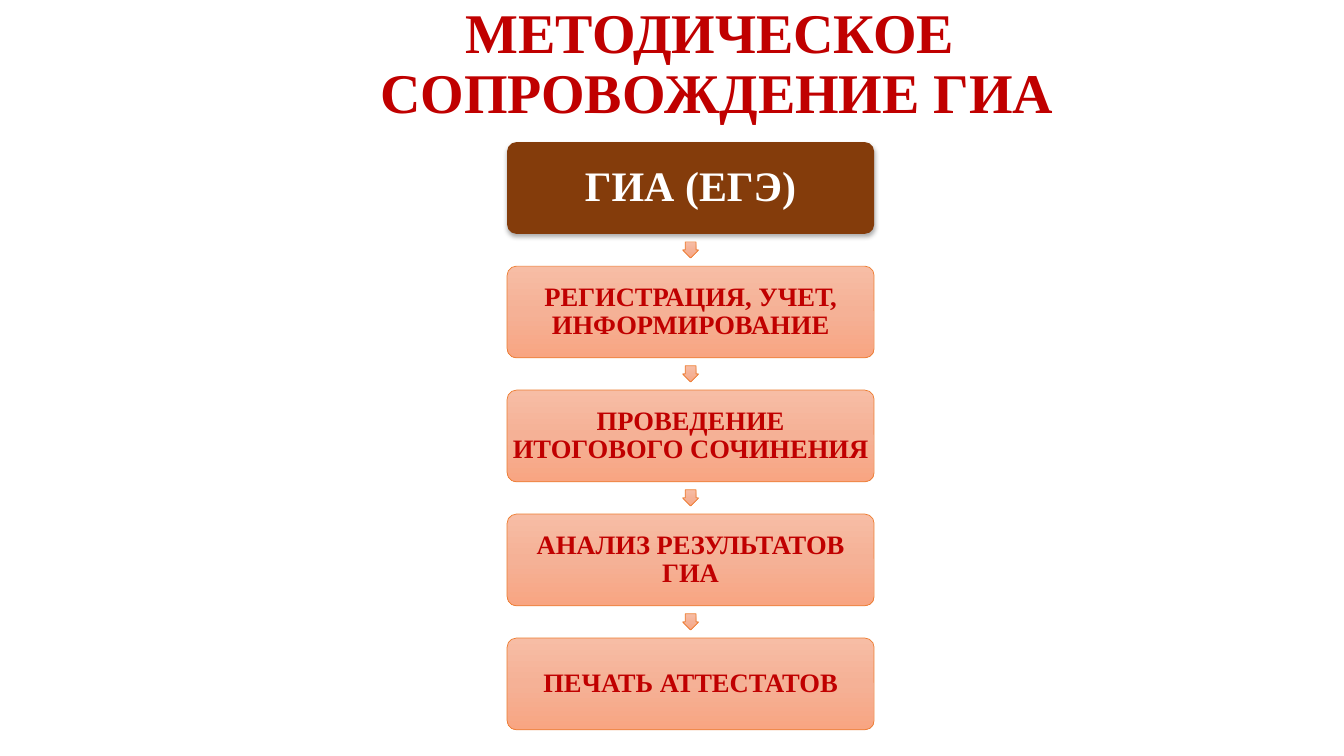
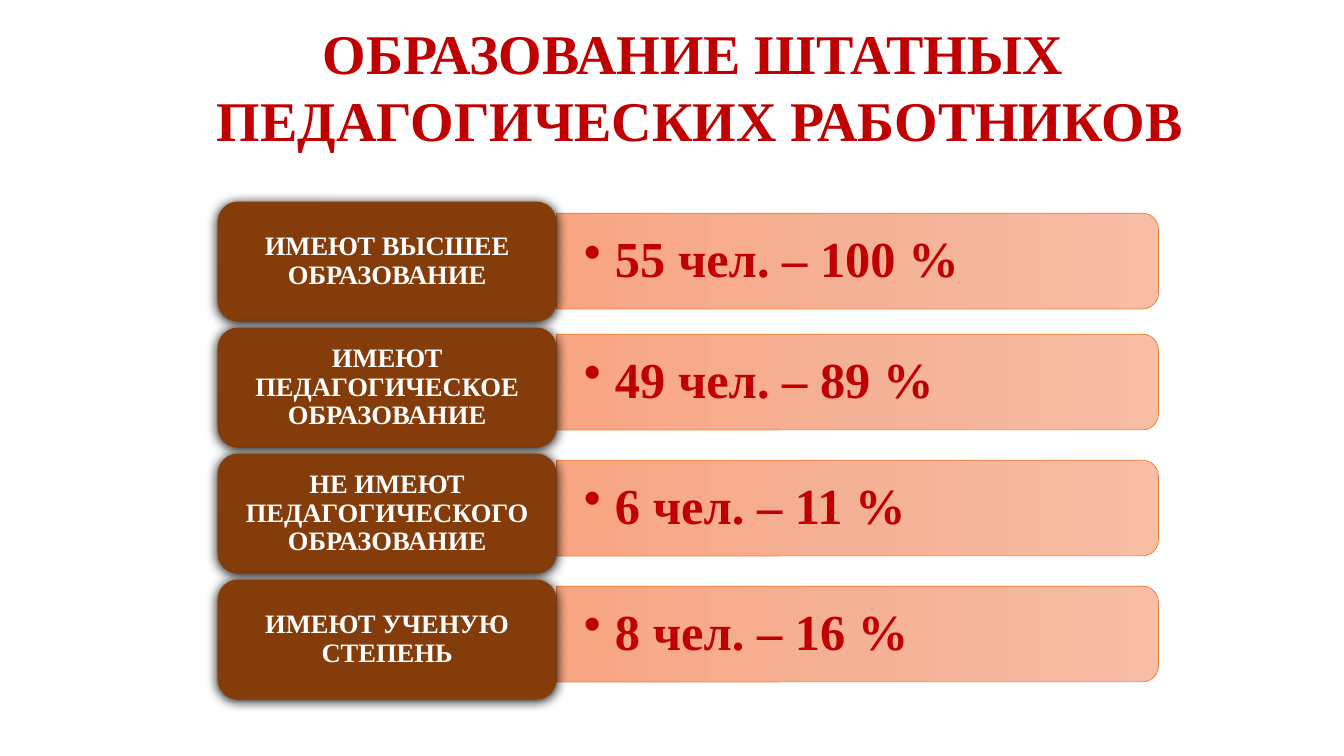
from copy import deepcopy

from lxml import etree
from pptx import Presentation
from pptx.dml.color import RGBColor
from pptx.enum.shapes import MSO_SHAPE
from pptx.enum.text import MSO_ANCHOR, MSO_AUTO_SIZE, PP_ALIGN
from pptx.oxml.ns import qn
from pptx.util import Inches, Pt

ROUNDED = MSO_SHAPE.ROUNDED_RECTANGLE
DOWN_ARROW = MSO_SHAPE.DOWN_ARROW
HALF_ROUNDED = MSO_SHAPE.ROUND_2_SAME_RECTANGLE
CENTER, LEFT = PP_ALIGN.CENTER, PP_ALIGN.LEFT
TOP, MIDDLE = MSO_ANCHOR.TOP, MSO_ANCHOR.MIDDLE
NO_AUTOFIT = MSO_AUTO_SIZE.NONE

FONT = "Times New Roman"
RED = RGBColor(0xC0, 0x00, 0x00)
WHITE = RGBColor(0xFF, 0xFF, 0xFF)
BROWN = RGBColor(0x84, 0x3C, 0x0B)
ORANGE = RGBColor(0xED, 0x7D, 0x31)
PEACH = [RGBColor(0xF7, 0xBD, 0xA5), RGBColor(0xF5, 0xB1, 0x96), RGBColor(0xF8, 0xA5, 0x82)]


def add_block(slide, kind, left, top, width, height, shadow=None):
    """Brown block if a shadow (opacity %, blur pt, distance pt) is given, else a peach one."""
    shape = slide.shapes.add_shape(kind, Inches(left), Inches(top), Inches(width), Inches(height))
    shape.shadow.inherit = False
    properties = shape.element.spPr
    if shadow:
        opacity, blur, distance = shadow
        shape.fill.solid()
        shape.fill.fore_color.rgb = BROWN
        shape.line.fill.background()
        outer = etree.SubElement(properties.find(qn("a:effectLst")), qn("a:outerShdw"),
                                 blurRad=str(Pt(blur)), dist=str(Pt(distance)),
                                 dir="5400000", algn="ctr", rotWithShape="0")
        color = etree.SubElement(outer, qn("a:srgbClr"), val="000000")
        etree.SubElement(color, qn("a:alpha"), val=str(opacity * 1000))
    else:
        shape.fill.gradient()
        shape.fill.gradient_angle = 270
        # Middle stop of the gradient
        stops = properties.find(qn("a:gradFill")).find(qn("a:gsLst"))
        stops.insert(1, deepcopy(stops[0]))
        stops[1].set("pos", "50000")
        for stop, color in zip(shape.fill.gradient_stops, PEACH):
            stop.color.rgb = color
        shape.line.color.rgb = ORANGE
        shape.line.width = Pt(0.5)
    return shape


def write(shape, text, size, color, align=CENTER, anchor=MIDDLE, spacing=0.9,
          margins=(0.1, 0.05), bullet_indent=None):
    frame = shape.text_frame
    frame.text = text
    frame.word_wrap = True
    frame.auto_size = NO_AUTOFIT
    frame.vertical_anchor = anchor
    frame.margin_left = frame.margin_right = Inches(margins[0])
    frame.margin_top = frame.margin_bottom = Inches(margins[1])
    for paragraph in frame.paragraphs:
        paragraph.alignment = align
        paragraph.line_spacing = spacing
        if bullet_indent:
            properties = paragraph._p.get_or_add_pPr()
            properties.set("marL", str(Inches(bullet_indent)))
            properties.set("indent", str(-Inches(bullet_indent)))
            etree.SubElement(properties, qn("a:buChar"), char="•")
        paragraph.font.name = FONT
        paragraph.font.size = Pt(size)
        paragraph.font.bold = True
        paragraph.font.color.rgb = color


presentation = Presentation()
presentation.slide_width = Inches(13.33)
presentation.slide_height = Inches(7.5)

# Slides with their titles: text, left, top, height, line spacing
titles = [
    ("МЕТОДИЧЕСКОЕ \nСОПРОВОЖДЕНИЕ ГИА", 1.11, 0, 1.25, 0.9),
    ("ОБРАЗОВАНИЕ ШТАТНЫХ \vПЕДАГОГИЧЕСКИХ РАБОТНИКОВ", 0.94, 0.13, 1.45, 1.0),
]
for text, left, top, height, spacing in titles:
    slide = presentation.slides.add_slide(presentation.slide_layouts[5])
    title = slide.shapes.title
    title.left, title.top = Inches(left), Inches(top)
    title.width, title.height = Inches(12), Inches(height)
    write(title, text, 40, RED, anchor=TOP, spacing=spacing)
support_slide, education_slide = presentation.slides

# Slide 1: chain of steps with arrows between them
STEP_LEFT, STEP_TOP, STEP_WIDTH, STEP_HEIGHT, STEP_PITCH = 5.03, 1.41, 3.64, 0.91, 1.23
ARROW_SIZE = 0.16
steps = [
    "ГИА (ЕГЭ)",
    "РЕГИСТРАЦИЯ, УЧЕТ, ИНФОРМИРОВАНИЕ",
    "ПРОВЕДЕНИЕ ИТОГОВОГО СОЧИНЕНИЯ",
    "АНАЛИЗ РЕЗУЛЬТАТОВ ГИА",
    "ПЕЧАТЬ АТТЕСТАТОВ",
]
for index, text in enumerate(steps):
    top = STEP_TOP + index * STEP_PITCH
    is_head = index == 0
    if not is_head:
        gap = STEP_PITCH - STEP_HEIGHT
        arrow = add_block(support_slide, DOWN_ARROW,
                          STEP_LEFT + (STEP_WIDTH - ARROW_SIZE) / 2,
                          top - (gap + ARROW_SIZE) / 2, ARROW_SIZE, ARROW_SIZE)
        arrow.adjustments[0] = 0.67
    step = add_block(support_slide, ROUNDED, STEP_LEFT, top, STEP_WIDTH, STEP_HEIGHT,
                     shadow=(32, 3.5, 2.2) if is_head else None)
    step.adjustments[0] = 0.1
    write(step, text, 30 if is_head else 19, WHITE if is_head else RED, margins=(0.02, 0.03))

# Slide 2: label cards with value bars
CARD_LEFT, CARD_TOP, CARD_WIDTH, CARD_HEIGHT, CARD_PITCH = 2.16, 2, 3.36, 1.19, 1.25
BAR_LEFT, BAR_LENGTH, BAR_THICKNESS = CARD_LEFT + CARD_WIDTH, 5.97, 0.95
# Label, value, middle of the bar
education_rows = [
    ("ИМЕЮТ ВЫСШЕЕ ОБРАЗОВАНИЕ", "55 чел. – 100 %", 2.59),
    ("ИМЕЮТ ПЕДАГОГИЧЕСКОЕ ОБРАЗОВАНИЕ", "49 чел. – 89 %", 3.79),
    ("НЕ ИМЕЮТ ПЕДАГОГИЧЕСКОГО ОБРАЗОВАНИЕ", "6 чел. – 11 %", 5.04),
    ("ИМЕЮТ УЧЕНУЮ СТЕПЕНЬ", "8 чел. – 16 %", 6.29),
]
for index, (label, value, middle) in enumerate(education_rows):
    # Bar turned so that its rounded end points right
    bar = add_block(education_slide, HALF_ROUNDED,
                    BAR_LEFT + (BAR_LENGTH - BAR_THICKNESS) / 2, middle - BAR_LENGTH / 2,
                    BAR_THICKNESS, BAR_LENGTH)
    bar.rotation = 90

    # Bulleted value
    value_box = education_slide.shapes.add_textbox(
        Inches(BAR_LEFT), Inches(middle - 0.43), Inches(5.93), Inches(0.86))
    write(value_box, value, 36, RED, align=LEFT, margins=(0.27, 0.14), bullet_indent=0.31)

    card = add_block(education_slide, ROUNDED, CARD_LEFT, CARD_TOP + index * CARD_PITCH,
                     CARD_WIDTH, CARD_HEIGHT, shadow=(100, 8.5, 1))
    write(card, label, 19, WHITE, margins=(0.08, 0.04))

presentation.save("out.pptx")
